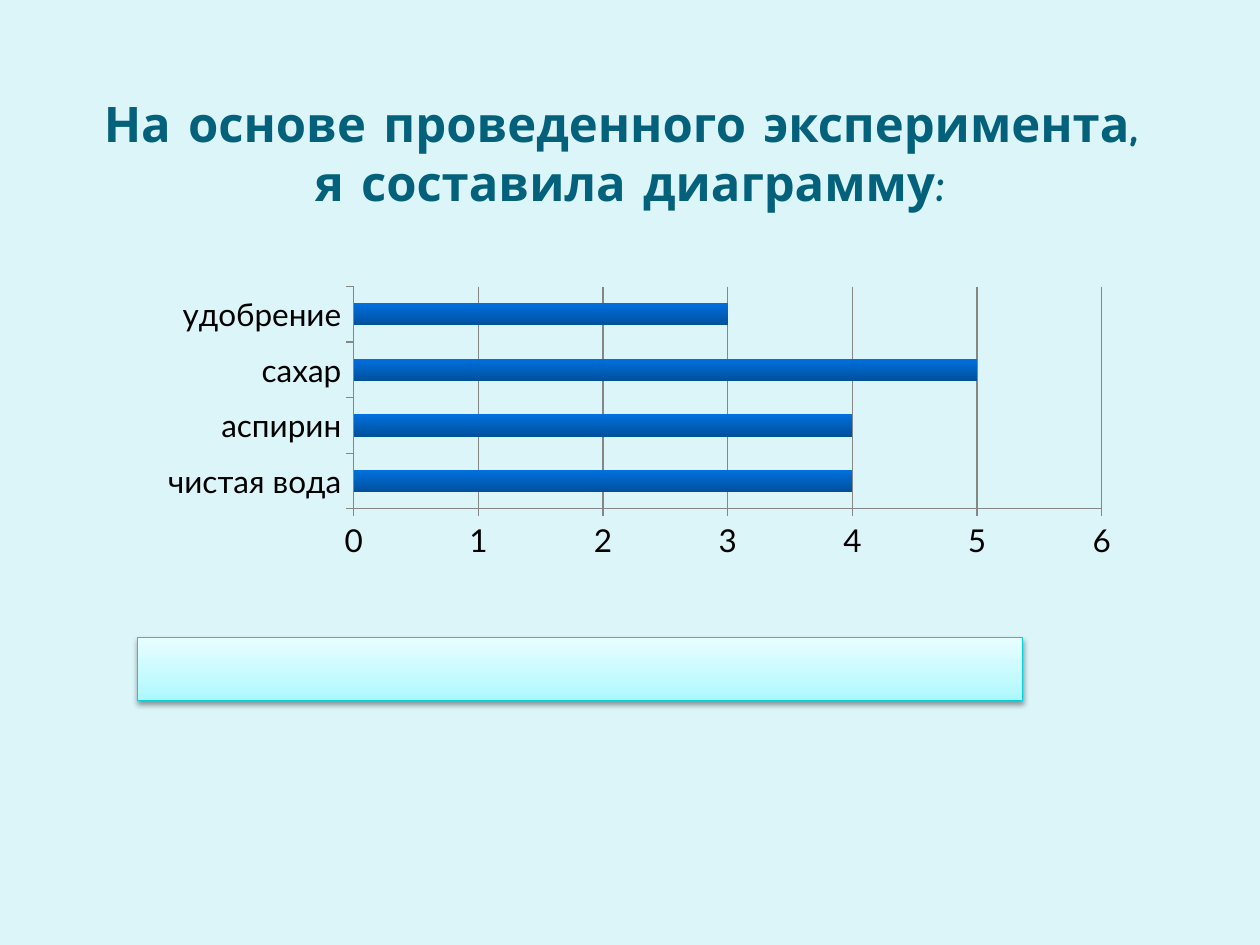
import pptx
import pptx.chart.data
import pptx.dml.color
import pptx.enum.chart
import pptx.enum.shapes
import pptx.enum.text
import pptx.oxml
import pptx.oxml.ns
import pptx.util

Pt = pptx.util.Pt
RGB = pptx.dml.color.RGBColor
BACKGROUND = RGB(0xDB, 0xF5, 0xF9)
TITLE = RGB(0x04, 0x61, 0x7B)
BLACK = RGB(0, 0, 0)
GRID = RGB(0x86, 0x86, 0x86)
FRAME = RGB(0x06, 0xD0, 0xD9)
BAR_STOPS = [(0, RGB(0x00, 0x50, 0x9C)), (100, RGB(0x00, 0x70, 0xDE))]
PANEL_STOPS = [
    (0, RGB(0xAB, 0xF8, 0xFF)),
    (35, RGB(0xC3, 0xFA, 0xFF)),
    (100, RGB(0xE8, 0xFD, 0xFF)),
]
NS = pptx.oxml.ns.nsdecls


def write_text(tf, text, font="Comic Neue", size=28, color=TITLE, bold=True):
    tf.word_wrap = True
    tf.vertical_anchor = pptx.enum.text.MSO_ANCHOR.MIDDLE
    p = tf.paragraphs[0]
    p.text = text
    p.alignment = pptx.enum.text.PP_ALIGN.CENTER
    for r in p.runs:
        r.font.name = font
        r.font.size = Pt(size)
        r.font.bold = bold
        r.font.color.rgb = color


def fill_gradient(fill, stops):
    fill.gradient()
    fill.gradient_angle = 90
    gs_lst = fill._fill._gradFill.find(pptx.oxml.ns.qn("a:gsLst"))
    for gs in list(gs_lst):
        gs_lst.remove(gs)
    for pos, color in stops:
        gs_lst.append(pptx.oxml.parse_xml(
            f'<a:gs {NS("a")} pos="{pos * 1000}"><a:srgbClr val="{color}"/></a:gs>'))


def add_title(s, text):
    sp = s.shapes.title
    sp.left, sp.top, sp.width, sp.height = Pt(36), Pt(42), Pt(648), Pt(90)
    write_text(sp.text_frame, text)


def format_axis(axis):
    axis.major_tick_mark = pptx.enum.chart.XL_TICK_MARK.OUTSIDE
    axis.minor_tick_mark = pptx.enum.chart.XL_TICK_MARK.NONE
    axis.format.line.color.rgb = GRID
    axis.format.line.width = Pt(0.75)


def set_plot_layout(chart, x, y, w, h):
    area = chart._chartSpace.chart.plotArea
    for old in area.findall(pptx.oxml.ns.qn("c:layout")):
        area.remove(old)
    sizes = "".join(f'<c:{k} val="{v}"/>' for k, v in zip("xywh", (x, y, w, h)))
    area.insert(0, pptx.oxml.parse_xml(
        f'<c:layout {NS("c")}><c:manualLayout><c:layoutTarget val="inner"/>'
        f'<c:xMode val="edge"/><c:yMode val="edge"/>{sizes}'
        '</c:manualLayout></c:layout>'))


def add_bar_chart(s, categories, values):
    data = pptx.chart.data.CategoryChartData()
    data.categories = categories
    data.add_series("Series 1", values)
    chart = s.shapes.add_chart(
        pptx.enum.chart.XL_CHART_TYPE.BAR_CLUSTERED,
        Pt(39.6), Pt(163.4), Pt(602), Pt(187.2), data).chart
    chart.has_legend = False
    chart.has_title = False
    chart.font.name = "Lato"
    chart.font.size = Pt(18)
    chart.font.color.rgb = BLACK
    plot = chart.plots[0]
    plot.vary_by_categories = False
    plot.gap_width = 150
    fill_gradient(plot.series[0].format.fill, BAR_STOPS)
    format_axis(chart.category_axis)
    axis = chart.value_axis
    format_axis(axis)
    axis.minimum_scale, axis.maximum_scale, axis.major_unit = 0, 6, 1
    axis.has_major_gridlines = True
    axis.major_gridlines.format.line.color.rgb = GRID
    axis.major_gridlines.format.line.width = Pt(0.75)
    set_plot_layout(chart, 0.27, 0, 0.71, 0.68)


def add_panel(s):
    sp = s.shapes.add_shape(
        pptx.enum.shapes.MSO_SHAPE.RECTANGLE, Pt(78.5), Pt(364.5), Pt(506), Pt(36))
    fill_gradient(sp.fill, PANEL_STOPS)
    sp.line.color.rgb = FRAME
    sp.line.width = Pt(0.75)
    sp.shadow.inherit = False
    effects = sp._element.spPr.find(pptx.oxml.ns.qn("a:effectLst"))
    effects.append(pptx.oxml.parse_xml(
        f'<a:outerShdw {NS("a")} blurRad="{Pt(3.1)}" dist="{Pt(1.6)}" dir="5400000" '
        'rotWithShape="0"><a:srgbClr val="000000"><a:alpha val="38000"/></a:srgbClr>'
        '</a:outerShdw>'))


def main():
    prs = pptx.Presentation()
    prs.slide_width, prs.slide_height = Pt(720), Pt(540)
    s = prs.slides.add_slide(prs.slide_layouts[5])
    s.background.fill.solid()
    s.background.fill.fore_color.rgb = BACKGROUND
    add_title(s, "На основе проведенного эксперимента, \vя составила диаграмму:")
    add_bar_chart(s, ["чистая вода", "аспирин", "сахар", "удобрение"], [4, 4, 5, 3])
    add_panel(s)
    prs.save("out.pptx")


if __name__ == "__main__":
    main()
